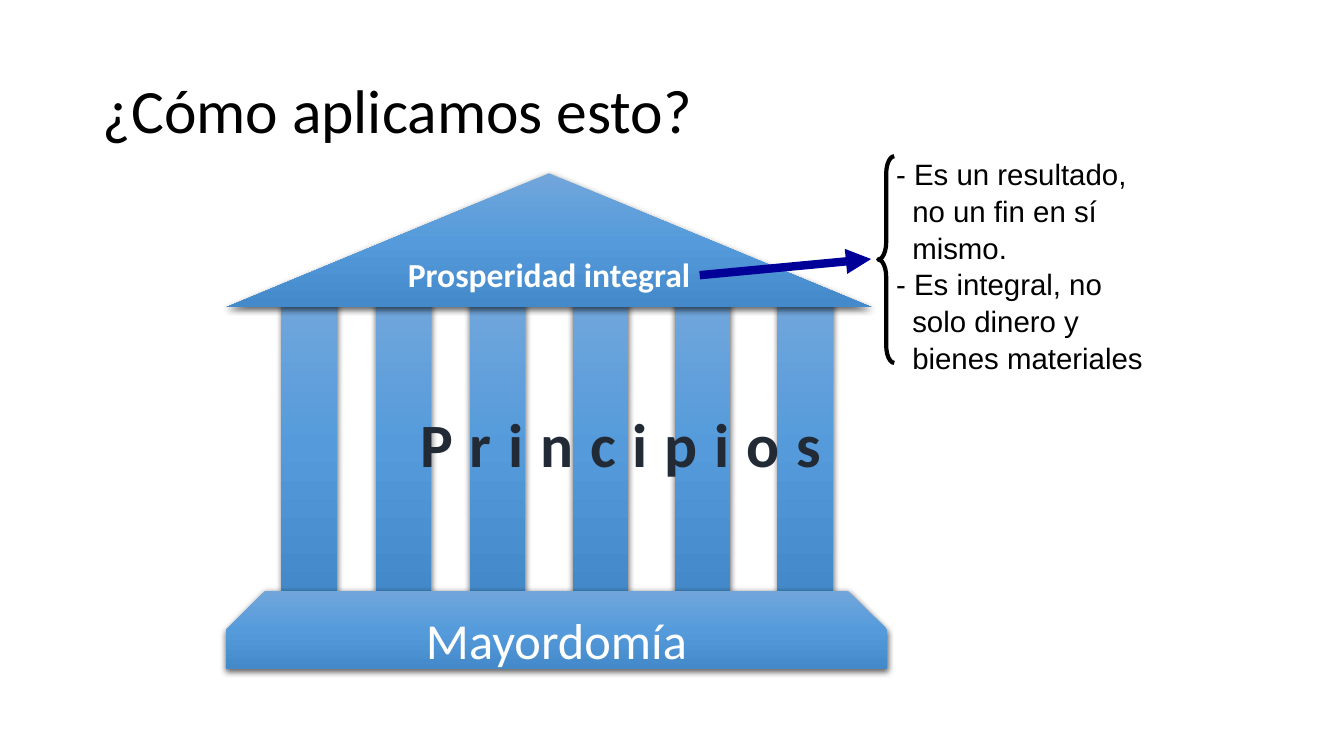
import pptx
import pptx.util
import pptx.dml.color
import pptx.enum.shapes
import pptx.enum.text
import pptx.oxml
import pptx.oxml.ns

SLIDE_W, SLIDE_H = 13.33, 7.5
TITLE = "¿Cómo aplicamos esto?"
ROOF, PILLARS, BASE = "Prosperidad integral", "Principios", "Mayordomía"
NOTES = [
    ("- Es un resultado,", "no un fin en sí", "mismo."),
    ("- Es integral, no", "solo dinero y", "bienes materiales"),
]
BLUES = [(0, "71A6DB"), (50, "559BDB"), (100, "448ACA")]
WHITE, BLACK, SLATE, NAVY = "FFFFFF", "000000", "222A35", "000099"
TEMPLE_LEFT, ROOF_TOP, BASE_TOP = 2.24, 1.72, 5.86
PILLAR_TOP, PILLAR_W = 2.97, 0.55
PILLAR_LEFTS = [2.79 + 0.935 * i for i in range(3)] + [5.68 + 1.015 * i for i in range(3)]
NOTE_INDENT = 0.16

SHAPE = pptx.enum.shapes.MSO_SHAPE
ANCHOR = pptx.enum.text.MSO_ANCHOR
ALIGN = pptx.enum.text.PP_ALIGN
inch = pptx.util.Inches
pt = pptx.util.Pt
NS = pptx.oxml.ns.nsdecls("a")


def rgb(value):
    return pptx.dml.color.RGBColor.from_string(value)


def add_run(p, text, size, color, font="Calibri", bold=False):
    r = p.add_run()
    r.text = text
    r.font.size = pt(size)
    r.font.name = font
    r.font.bold = bold
    r.font.color.rgb = rgb(color)
    return r


def add_box(s, box, wrap=True):
    tf = s.shapes.add_textbox(*map(inch, box)).text_frame
    tf.word_wrap = wrap
    return tf


def add_block(s, kind, box, text="", size=24, bold=False, adjust=()):
    sp = s.shapes.add_shape(kind, *map(inch, box))
    for i, value in enumerate(adjust):
        sp.adjustments[i] = value
    stops = "".join(
        f'<a:gs pos="{pos * 1000}"><a:srgbClr val="{color}"/></a:gs>' for pos, color in BLUES
    )
    sp.line.fill.background()
    line = sp.line._get_or_add_ln()
    line.addprevious(pptx.oxml.parse_xml(
        f'<a:gradFill {NS} rotWithShape="1"><a:gsLst>{stops}</a:gsLst>'
        '<a:lin ang="5400000" scaled="0"/></a:gradFill>'
    ))
    line.addnext(pptx.oxml.parse_xml(
        f'<a:effectLst {NS}><a:outerShdw blurRad="{pt(4.5)}" dist="{pt(1.5)}" dir="5400000" '
        'algn="ctr" rotWithShape="0"><a:srgbClr val="000000"><a:alpha val="63000"/>'
        "</a:srgbClr></a:outerShdw></a:effectLst>"
    ))
    if text:
        tf = sp.text_frame
        tf.vertical_anchor = ANCHOR.MIDDLE
        p = tf.paragraphs[0]
        p.alignment = ALIGN.CENTER
        add_run(p, text, size, WHITE, bold=bold)


def add_arrow(s, start, end):
    line = s.shapes.add_connector(
        pptx.enum.shapes.MSO_CONNECTOR.STRAIGHT, *map(inch, start + end)
    )
    line.line.color.rgb = rgb(NAVY)
    line.line.width = pt(6)
    ln = line.line._get_or_add_ln()
    ln.append(pptx.oxml.parse_xml(f'<a:tailEnd {NS} type="triangle"/>'))
    ln.addnext(pptx.oxml.parse_xml(f"<a:effectLst {NS}/>"))


def add_brace(s, box):
    sp = s.shapes.add_shape(SHAPE.LEFT_BRACE, *map(inch, box))
    sp.adjustments[0] = 1.08
    sp.shadow.inherit = False
    sp.fill.background()
    sp.line.color.rgb = rgb(BLACK)
    sp.line.width = pt(3)


def add_notes(s, box):
    tf = add_box(s, box)
    lines = [(row, text) for note in NOTES for row, text in enumerate(note)]
    for i, (row, text) in enumerate(lines):
        p = tf.add_paragraph() if i else tf.paragraphs[0]
        p.line_spacing = 1.04
        if row:
            p._p.get_or_add_pPr().set("marL", str(inch(NOTE_INDENT)))
        add_run(p, text, 21, BLACK, "Arial")


def main():
    prs = pptx.Presentation()
    prs.slide_width, prs.slide_height = inch(SLIDE_W), inch(SLIDE_H)
    s = prs.slides.add_slide(prs.slide_layouts[6])

    tf = add_box(s, (0.92, 0.4, 11.5, 1.45))
    tf.vertical_anchor = ANCHOR.MIDDLE
    tf.paragraphs[0].line_spacing = 0.9
    add_run(tf.paragraphs[0], TITLE, 44, BLACK)

    for left in PILLAR_LEFTS:
        add_block(s, SHAPE.RECTANGLE, (left, PILLAR_TOP, PILLAR_W, BASE_TOP - PILLAR_TOP))
    add_block(s, SHAPE.SNIP_2_SAME_RECTANGLE, (TEMPLE_LEFT, BASE_TOP, 6.56, 0.78),
              BASE, 36, adjust=(0.5, 0))
    add_block(s, SHAPE.ISOSCELES_TRIANGLE, (TEMPLE_LEFT, ROOF_TOP, 6.41, 1.33),
              ROOF, 24, True, (0.5,))

    tf = add_box(s, (4.07, 3.98, 4.38, 0.84), wrap=False)
    r = add_run(tf.paragraphs[0], PILLARS, 44, SLATE, bold=True)
    r.font._element.set("spc", "1200")

    add_arrow(s, (6.94, 2.73), (8.64, 2.57))
    add_brace(s, (8.71, 1.55, 0.16, 2.05))
    add_notes(s, (8.79, 1.49, 2.87, 2.2))
    prs.save("out.pptx")


if __name__ == "__main__":
    main()
